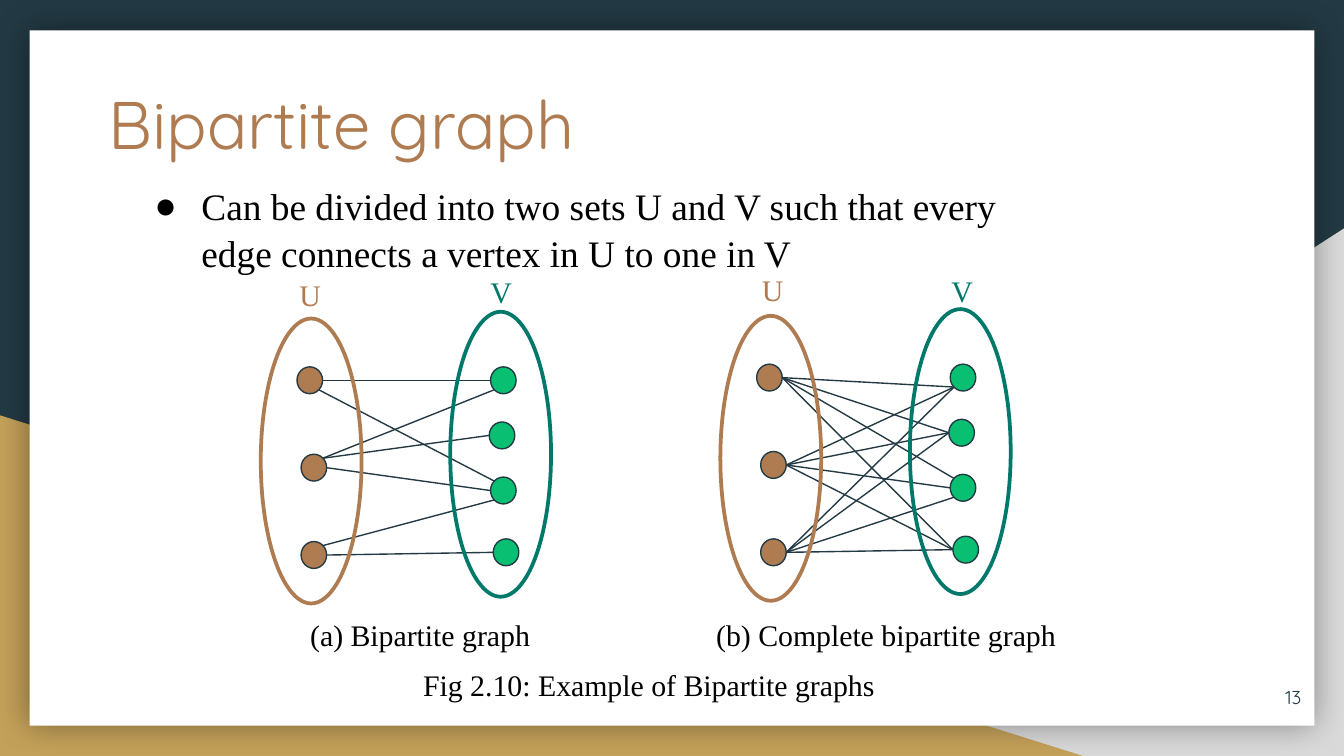
from lxml import etree
from pptx import Presentation
from pptx.dml.color import RGBColor
from pptx.enum.shapes import MSO_CONNECTOR, MSO_SHAPE
from pptx.enum.text import MSO_ANCHOR, PP_ALIGN
from pptx.oxml.ns import qn
from pptx.util import Inches, Pt

RECT, OVAL, WEDGE = MSO_SHAPE.RECTANGLE, MSO_SHAPE.OVAL, MSO_SHAPE.RIGHT_TRIANGLE
LINE = MSO_CONNECTOR.STRAIGHT
MID, RIGHT = MSO_ANCHOR.MIDDLE, PP_ALIGN.RIGHT
COLS, ROWS = 100, 56.25
CELL = Inches(10) / COLS
HEX = {"dark": "233A44", "grey": "D9D9D9", "gold": "C4A15A", "white": "FFFFFF",
       "brown": "AF7B51", "green": "08BF72", "teal": "00796B", "black": "000000"}
SERIF, SANS = "Times New Roman", "Quicksand"

DOT = (1.9, 2)
LEFT = [(0, 0), (0.3, 6.5), (0.3, 13)]
FAR = [(14.4, 0), (14.3, 4.1), (14.4, 8.2), (14.6, 12.8)]
PORTS = {"w": (0, 0.5), "e": (1, 0.5), "nw": (0.15, 0.15),
         "ne": (0.85, 0.15), "sw": (0.15, 0.85), "se": (0.85, 0.85)}
SOME = [(0, "e", 0, "w"), (0, "se", 2, "nw"), (1, "ne", 0, "sw"), (1, "ne", 1, "w"),
        (1, "e", 2, "w"), (2, "ne", 2, "sw"), (2, "e", 3, "w")]
ENDS = [("sw", "w", "nw", "w"), ("sw", "w", "w", "w"), ("sw", "w", "sw", "w")]
ALL = [(u, "e", v, port) for u, row in enumerate(ENDS) for v, port in enumerate(row)]


def size(*cells):
    return [round(n * CELL) for n in cells]


def tint(name):
    return RGBColor.from_string(HEX[name])


def put(obj, values):
    for key, value in values.items():
        setattr(obj, key, value)


def shape(slide, kind, box, fill=None, edge=None, width=0.75):
    item = slide.shapes.add_shape(kind, *size(*box))
    item.shadow.inherit = False
    if fill:
        item.fill.solid()
        item.fill.fore_color.rgb = tint(fill)
    else:
        item.fill.background()
    if edge:
        item.line.color.rgb = tint(edge)
        item.line.width = Pt(width)
    else:
        item.line.fill.background()
    return item


def text(slide, words, box, color="black", points=16, font=SERIF, frame=None, para=None):
    area = slide.shapes.add_textbox(*size(*box)).text_frame
    form = {f"margin_{side}": Inches(0.1) for side in ("left", "right", "top", "bottom")}
    put(area, {**form, "word_wrap": True, **(frame or {})})
    line = area.paragraphs[0]
    put(line, para or {})
    run = line.add_run()
    run.text = words
    put(run.font, {"name": font, "size": Pt(points)})
    run.font.color.rgb = tint(color)
    return line


def edge(slide, start, end):
    line = slide.shapes.add_connector(LINE, *size(*start, *end))
    line.line.color.rgb = tint("dark")
    line.line.width = Pt(0.75)
    etree.SubElement(line.element.spPr, qn("a:effectLst"))


def glow(item):
    effects = item.element.spPr.find(qn("a:effectLst"))
    shade = etree.SubElement(effects, qn("a:outerShdw"), blurRad=str(Pt(18)),
                             dist="0", dir="0", algn="ctr", rotWithShape="0")
    color = etree.SubElement(shade, qn("a:srgbClr"), val=HEX["black"])
    etree.SubElement(color, qn("a:alpha"), val="40000")


def bullet(line):
    props = line._p.get_or_add_pPr()
    put_xml = {"marL": Inches(0.5), "indent": Inches(-0.35)}
    for key, value in put_xml.items():
        props.set(key, str(value))
    color = etree.SubElement(props, qn("a:buClr"))
    etree.SubElement(color, qn("a:srgbClr"), val=HEX["black"])
    etree.SubElement(props, qn("a:buFont"), typeface=SERIF)
    etree.SubElement(props, qn("a:buChar"), char="●")


def graph(slide, x, y, edges, tags):
    def port(spot, side):
        return [base + off + share * span for base, off, share, span
                in zip((x, y), spot, PORTS[side], DOT)]

    for spots, fill in ((LEFT, "brown"), (FAR, "green")):
        for dx, dy in spots:
            shape(slide, OVAL, (x + dx, y + dy, *DOT), fill, "dark")
    for u, out, v, into in edges:
        edge(slide, port(LEFT[u], out), port(FAR[v], into))
    for dx, dy, color in ((-2.7, -3.6, "brown"), (11.4, -4.1, "teal")):
        shape(slide, OVAL, (x + dx, y + dy, 7.5, 21.2), None, color, 2)
    slim = {"margin_top": Inches(0.05), "margin_bottom": Inches(0.05), "word_wrap": False}
    for name, color, (dx, dy) in zip("UV", ("brown", "teal"), tags):
        text(slide, name, (x + dx, y + dy, 3.6, 3.7), color, frame=slim)


def scene(slide):
    slide.background.fill.solid()
    slide.background.fill.fore_color.rgb = tint("dark")
    wedge = shape(slide, WEDGE, (39.2, 17, 60.8, ROWS - 17), "grey")
    wedge.element.spPr.get_or_add_xfrm().set("flipH", "1")
    shape(slide, WEDGE, (0, 30.9, 80.6, ROWS - 30.9), "gold")
    glow(shape(slide, RECT, (2.2, 2.25, COLS - 4.4, 51.75), "white"))


def main():
    deck = Presentation()
    put(deck, {"slide_width": round(COLS * CELL), "slide_height": round(ROWS * CELL)})
    slide = deck.slides.add_slide(deck.slide_layouts[6])
    scene(slide)
    text(slide, "Bipartite graph", (7.1, 5.1, 42.3, 7.1), "brown", 36, SANS)
    bullet(text(slide, "Can be divided into two sets U and V such that every edge "
                "connects a vertex in U to one in V", (9, 12.5, 70.6, 9.4),
                points=20, para={"line_spacing": 1.05}))
    text(slide, "13", (91.8, 49.7, 6, 4.3), "dark", 10, SANS,
         {"vertical_anchor": MID}, {"alignment": RIGHT})
    graph(slide, 22.1, 27.3, SOME, [(-0.8, -7.2), (13.4, -7.4)])
    graph(slide, 56.3, 27.1, ALL, [(-0.6, -7.4), (13.5, -7.3)])
    for words, x, y, wide in (("(a) Bipartite graph", 22.1, 44.9, 21.7),
                              ("(b) Complete bipartite graph", 52.3, 44.9, 28.1),
                              ("Fig 2.10: Example of Bipartite graphs", 30.5, 48.6, 36.3)):
        text(slide, words, (x, y, wide, 3.5))
    deck.save("out.pptx")


if __name__ == "__main__":
    main()
